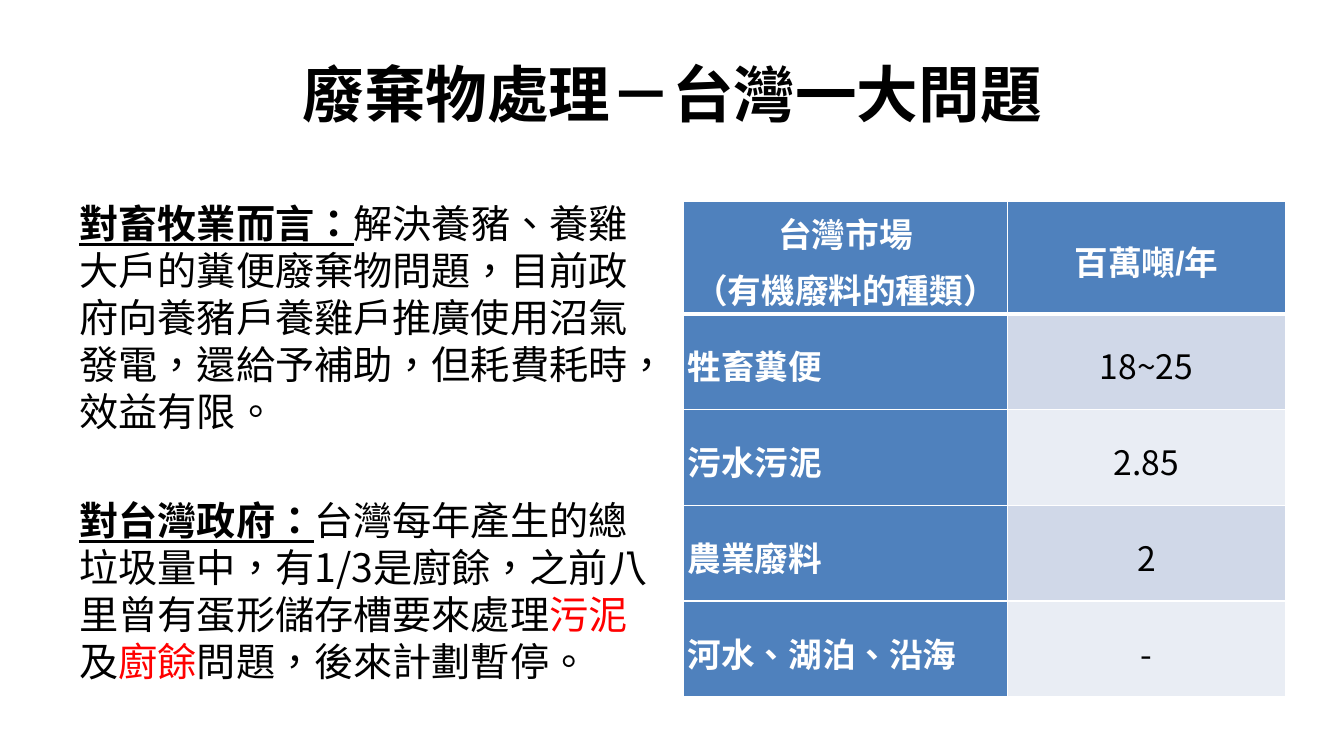
from lxml import etree
from pptx import Presentation
from pptx import util as u
from pptx.dml import color
from pptx.enum import lang, text
from pptx.oxml import ns

BLUE, WHITE, BLACK, RED = "4F81BD", "FFFFFF", "000000", "FF0000"
BANDS = ("D0D8E8", "E9EDF4")
CJK, LATIN = "Noto Sans CJK SC", "Arial"
CENTER, LEFT = text.PP_ALIGN.CENTER, text.PP_ALIGN.LEFT

HEADERS = ((("台灣市場",), ("（有機廢料的種類）",)), (("百萬噸", "/", "年"),))
WASTES = (("牲畜糞便", "18~25"), ("污水污泥", "2.85"), ("農業廢料", "2"), ("河水、湖泊、沿海", "-"))

ARGUMENTS = (
    (("對畜牧業而言：", True, BLACK),
     ("解決養豬、養雞大戶的糞便廢棄物問題，目前政府向養豬戶養雞戶推廣使用沼氣"
      "發電，還給予補助，但耗費耗時，效益有限。", False, BLACK)),
    (("對台灣政府：", True, BLACK),
     ("台灣每年產生的總垃圾量中，有1/3是廚餘，之前八里曾有蛋形儲存槽要來處理", False, BLACK),
     ("污泥", False, RED), ("及", False, BLACK), ("廚餘", False, RED),
     ("問題，後來計劃暫停。", False, BLACK)),
)


def rgb(value):
    return color.RGBColor.from_string(value)


class Page:
    def __init__(self, deck):
        self.slide = deck.slides.add_slide(deck.slide_layouts[5])

    def style(self, font, size, ink, bold=False):
        font.name, font.size, font.bold = CJK, u.Pt(size), bold
        font.color.rgb = rgb(ink)

    def piece(self, line, wording):
        run = line.add_run()
        run.text = wording
        run.font.language_id = lang.MSO_LANGUAGE_ID.TRADITIONAL_CHINESE
        return run

    def east_asian(self, run):
        etree.SubElement(run.font._element, ns.qn("a:ea"), typeface=CJK)

    def title(self, wording, box):
        heading = self.slide.shapes.title
        heading.left, heading.top, heading.width, heading.height = map(u.Inches, box)
        frame = heading.text_frame
        frame.vertical_anchor = text.MSO_ANCHOR.BOTTOM
        line = frame.paragraphs[0]
        line.alignment = CENTER
        self.style(line.font, 44, BLACK, True)
        self.east_asian(self.piece(line, wording))

    def body(self, paragraphs, box):
        frame = self.slide.shapes.add_textbox(*map(u.Inches, box)).text_frame
        frame.word_wrap = True
        for index, pieces in enumerate(paragraphs):
            line = frame.add_paragraph() if index else frame.paragraphs[0]
            if index:
                line.space_before = u.Pt(44)
            for wording, lead, ink in pieces:
                run = self.piece(line, wording)
                self.style(run.font, 28, ink, lead)
                run.font.underline = lead
                self.east_asian(run)

    def cell(self, cell, lines, fill, ink, bold, align, bottom=1):
        cell.fill.solid()
        cell.fill.fore_color.rgb = rgb(fill)
        cell.vertical_anchor = text.MSO_ANCHOR.MIDDLE
        cell.margin_left = cell.margin_right = u.Inches(0.04)
        cell.margin_top = cell.margin_bottom = 0
        frame = cell.text_frame
        for index, pieces in enumerate(lines):
            line = frame.add_paragraph() if index else frame.paragraphs[0]
            line.alignment, line.line_spacing = align, 1.15
            for wording in pieces:
                run = self.piece(line, wording)
                self.style(run.font, 24, ink, bold)
                if wording == "/":
                    run.font.name = LATIN
                self.east_asian(run)
        properties = cell._tc.get_or_add_tcPr()
        for place, side in enumerate(("lnL", "lnR", "lnT", "lnB")):
            width = bottom if side == "lnB" else 1
            border = etree.Element(ns.qn("a:" + side), w=str(u.Pt(width)))
            paint = etree.SubElement(border, ns.qn("a:solidFill"))
            etree.SubElement(paint, ns.qn("a:srgbClr"), val=WHITE)
            properties.insert(place, border)

    def table(self, headers, rows, box, widths, heights):
        grid = self.slide.shapes.add_table(len(rows) + 1, len(headers), *map(u.Inches, box)).table
        for column, width in zip(grid.columns, widths):
            column.width = u.Inches(width)
        for row, height in zip(grid.rows, heights):
            row.height = u.Inches(height)
        for index, lines in enumerate(headers):
            self.cell(grid.cell(0, index), lines, BLUE, WHITE, True, CENTER, 3)
        for index, (waste, amount) in enumerate(rows):
            self.cell(grid.cell(index + 1, 0), [[waste]], BLUE, WHITE, True, LEFT)
            self.cell(grid.cell(index + 1, 1), [[amount]], BANDS[index % 2], BLACK, False, CENTER)


def main():
    deck = Presentation()
    deck.slide_width, deck.slide_height = u.Inches(13.33), u.Inches(7.5)
    page = Page(deck)
    page.title("廢棄物處理－台灣一大問題", (0.31, -0.03, 12.72, 1.37))
    page.table(HEADERS, WASTES, (6.78, 2, 5.97, 4.82), (3.21, 2.76), [1.02] + [0.95] * 4)
    page.body(ARGUMENTS, (0.69, 1.93, 5.83, 5))
    deck.save("out.pptx")


if __name__ == "__main__":
    main()
